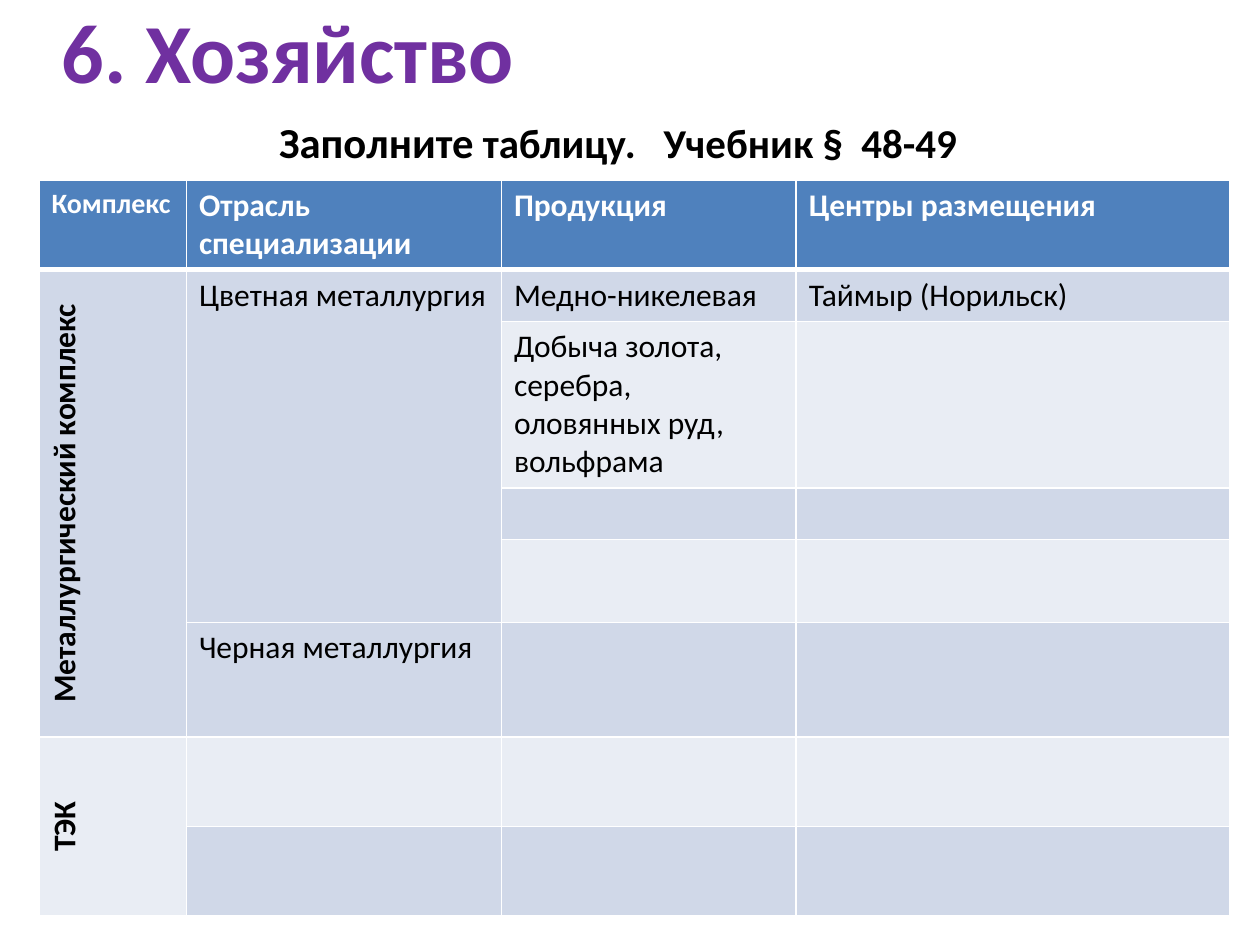
import pptx
import pptx.util
import pptx.dml.color
import pptx.enum.text
import pptx.oxml
import pptx.oxml.ns
from pptx.util import Inches

FONT = "Calibri"
COLORS = {"title": "7030A0", "text": "000000", "white": "FFFFFF",
          "header": "4F81BD", "dark": "D0D8E8", "light": "E9EDF4"}

TITLE = "6. Хозяйство"
# Text, size, bold, extra letter spacing in points
SUBTITLE = [("Заполните", 24.4, True, 0), (" ", 23.4, False, 0),
            ("таблицу.", 23.4, True, 0), (" ", 23.4, True, 10.6),
            ("Учебник §", 23.4, True, 0), (" ", 23.4, True, 5.3),
            ("48-49", 23.4, True, 0)]

COLUMN_WIDTHS = [1.17, 2.5, 2.34, 3.44]
ROW_HEIGHTS = [0.71, 0.41, 1.25, 0.41, 0.66, 0.91, 0.71, 0.71]
ROWS = [
    ["Комплекс", "Отрасль специализации", "Продукция", "Центры размещения"],
    ["Металлургический комплекс", "Цветная металлургия", "Медно-никелевая",
     "Таймыр (Норильск)"],
    ["", "", "Добыча золота, серебра, оловянных руд, вольфрама", ""],
    ["", "", "", ""],
    ["", "", "", ""],
    ["", "Черная металлургия", "", ""],
    ["ТЭК", "", "", ""],
    ["", "", "", ""],
]
# First row, last row, column
MERGES = [(1, 5, 0), (1, 4, 1), (6, 7, 0)]


def line_xml(tag, width):
    return pptx.oxml.parse_xml(
        f'<a:{tag} {pptx.oxml.ns.nsdecls("a")} w="{pptx.util.Pt(width)}">'
        f'<a:solidFill><a:srgbClr val="{COLORS["white"]}"/></a:solidFill></a:{tag}>')


def set_font(font, size, color, bold):
    font.name = FONT
    font.size = pptx.util.Pt(size)
    font.bold = bold
    font.color.rgb = pptx.dml.color.RGBColor.from_string(COLORS[color])


def format_cell(cell, row, column):
    properties = cell._tc.get_or_add_tcPr()
    widths = {"lnL": 1, "lnR": 1, "lnT": 3 if row == 1 else 1, "lnB": 3 if row == 0 else 1}
    for tag, width in widths.items():
        properties.append(line_xml(tag, width))
    fill = "header" if row == 0 else "dark" if row % 2 else "light"
    cell.fill.solid()
    cell.fill.fore_color.rgb = pptx.dml.color.RGBColor.from_string(COLORS[fill])

    cell.text = ROWS[row][column]
    para = cell.text_frame.paragraphs[0]
    if row and column == 0:
        properties.set("vert", "vert270")
        cell.vertical_anchor = pptx.enum.text.MSO_ANCHOR.MIDDLE
        para.alignment = pptx.enum.text.PP_ALIGN.CENTER
    set_font(para.font, 16 if row == column == 0 else 18,
             "text" if row else "white", row == 0 or column == 0)


def add_title(slide):
    title = slide.shapes.title
    title.left, title.top = Inches(0.39), Inches(-0.23)
    title.width, title.height = Inches(9.38), Inches(1.25)
    title.text_frame.text = TITLE
    title.text_frame.vertical_anchor = pptx.enum.text.MSO_ANCHOR.MIDDLE
    para = title.text_frame.paragraphs[0]
    para.alignment = pptx.enum.text.PP_ALIGN.LEFT
    set_font(para.font, 48, "title", True)
    para.runs[0]._r.get_or_add_rPr().insert(0, line_xml("ln", 1.4))


def add_subtitle(slide):
    box = slide.shapes.add_textbox(Inches(0.31), Inches(0.7), Inches(9.19), Inches(0.85))
    box.text_frame.word_wrap = True
    box.text_frame.vertical_anchor = pptx.enum.text.MSO_ANCHOR.MIDDLE
    para = box.text_frame.paragraphs[0]
    para.alignment = pptx.enum.text.PP_ALIGN.CENTER
    for text, size, bold, spacing in SUBTITLE:
        run = para.add_run()
        run.text = text
        set_font(run.font, size, "text", bold)
        if spacing:
            run._r.get_or_add_rPr().set("spc", str(round(spacing * 100)))


def add_industry_table(slide):
    table = slide.shapes.add_table(
        len(ROWS), len(COLUMN_WIDTHS), Inches(0.31), Inches(1.43),
        Inches(sum(COLUMN_WIDTHS)), Inches(sum(ROW_HEIGHTS))).table
    table.horz_banding = False
    table.first_row = False
    for column, width in zip(table.columns, COLUMN_WIDTHS):
        column.width = Inches(width)
    for row, height in zip(table.rows, ROW_HEIGHTS):
        row.height = Inches(height)
    for row in range(len(ROWS)):
        for column in range(len(COLUMN_WIDTHS)):
            format_cell(table.cell(row, column), row, column)
    for first, last, column in MERGES:
        table.cell(first, column).merge(table.cell(last, column))


def main():
    deck = pptx.Presentation()
    deck.slide_width, deck.slide_height = Inches(10), Inches(7.5)
    slide = deck.slides.add_slide(deck.slide_layouts[5])
    add_industry_table(slide)
    add_title(slide)
    add_subtitle(slide)
    deck.save("out.pptx")


if __name__ == "__main__":
    main()
